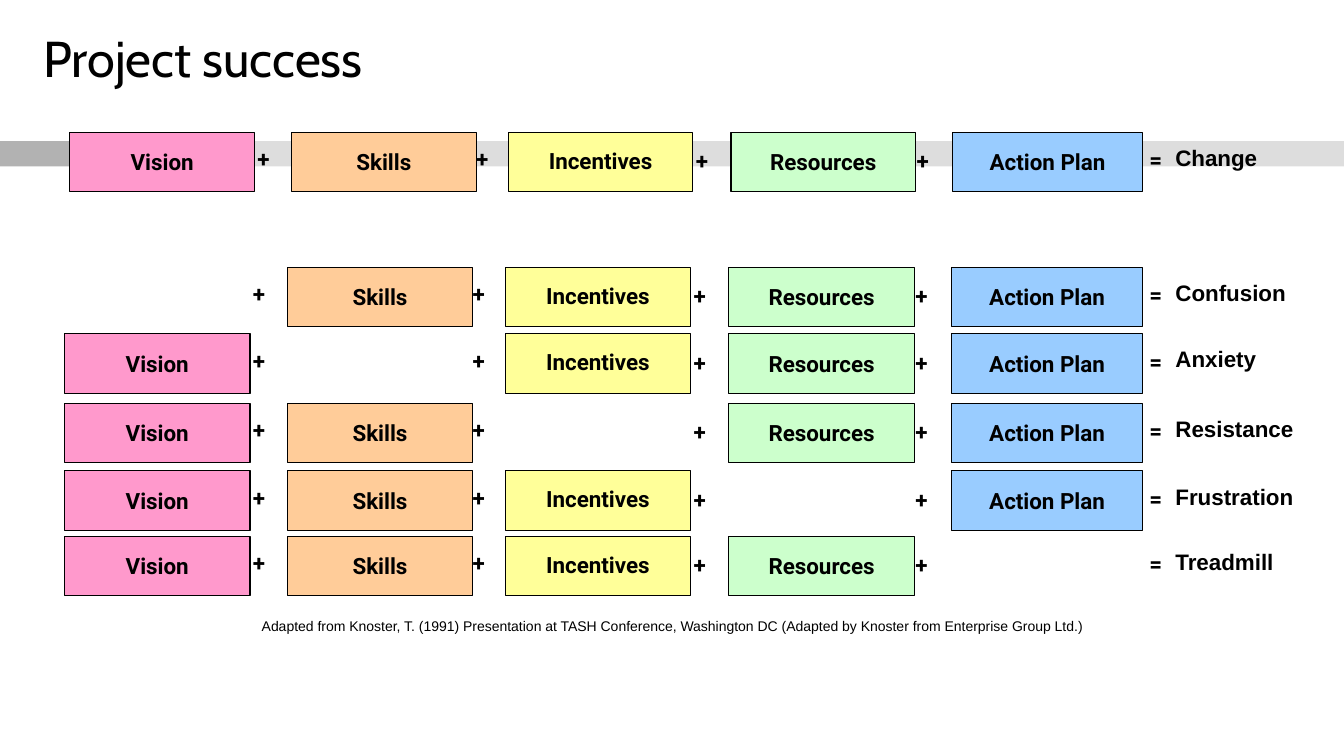
from pptx import Presentation
from pptx.dml.color import RGBColor
from pptx.enum.shapes import MSO_SHAPE as Shape
from pptx.enum.text import MSO_ANCHOR as Anchor, MSO_AUTO_SIZE as AutoSize, PP_ALIGN as Align
from pptx.util import Inches, Pt

COLORS = {
    "black": "000000", "dark band": "B2B2B2", "light band": "DDDDDD",
    "Vision": "FF99CC", "Skills": "FFCC99", "Incentives": "FFFF99",
    "Resources": "CCFFCC", "Action Plan": "99CCFF",
}
# Name, left and width of each factor
FACTORS = [
    ("Vision", 0.64, 1.84), ("Skills", 2.85, 1.84), ("Incentives", 5.01, 1.84),
    ("Resources", 7.23, 1.84), ("Action Plan", 9.44, 1.89),
]
# Left and drop below the row top of each operator
OPERATORS = [
    ("+", 2.41, 0.08), ("+", 4.59, 0.08), ("+", 6.78, 0.1), ("+", 8.98, 0.1),
    ("=", 11.3, 0.09),
]
# Row top, missing factor, outcome, reduction of the horizontal scale in percent
ROWS = [
    (1.31, None, "Change", 0.5),
    (2.65, "Vision", "Confusion", 0),
    (3.31, "Skills", "Anxiety", 0),
    (4, "Incentives", "Resistance", 0),
    (4.67, "Resources", "Frustration", 0),
    (5.32, "Action Plan", "Treadmill", 0),
]
FACTORS_RIGHT = 11.33


class SuccessSlide:
    def __init__(self, slide):
        self.slide = slide

    def color(self, name):
        return RGBColor.from_string(COLORS[name])

    def set_text(self, frame, text, size=16, font="Roboto", bold=True, align=Align.LEFT):
        frame.text = text
        para = frame.paragraphs[0]
        para.alignment = align
        for span in para.runs:
            span.font.name = font
            span.font.size = Pt(size)
            span.font.bold = bold
            span.font.color.rgb = self.color("black")

    def title(self, text, left, top, width, height):
        title = self.slide.shapes.title
        title.left, title.top = Inches(left), Inches(top)
        title.width, title.height = Inches(width), Inches(height)
        title.text_frame.vertical_anchor = Anchor.MIDDLE
        self.set_text(title.text_frame, text, 36, "Cabin", False)

    def rectangle(self, fill, left, top, width, height):
        box = self.slide.shapes.add_shape(
            Shape.RECTANGLE, Inches(left), Inches(top), Inches(width), Inches(height))
        box.shadow.inherit = False
        box.fill.solid()
        box.fill.fore_color.rgb = self.color(fill)
        box.line.fill.background()
        return box

    def factor(self, name, left, top, width):
        box = self.rectangle(name, left, top, width, 0.59)
        box.line.color.rgb = self.color("black")
        box.line.width = Pt(0.75)
        frame = box.text_frame
        frame.vertical_anchor = Anchor.MIDDLE
        if name == "Incentives":
            frame.margin_left = frame.margin_right = Inches(0.02)
            frame.margin_top, frame.margin_bottom = Inches(0.01), Inches(0.04)
        self.set_text(frame, name, align=Align.CENTER)

    def label(self, text, left, top, width, height=0.37, **style):
        box = self.slide.shapes.add_textbox(
            Inches(left), Inches(top), Inches(width), Inches(height))
        box.text_frame.word_wrap = True
        box.text_frame.auto_size = AutoSize.SHAPE_TO_FIT_TEXT
        self.set_text(box.text_frame, text, **style)

    def equation(self, top, missing, outcome, reduction):
        """Draw one row, reduced horizontally towards the right edge of the factors."""
        scale = 1 - reduction / 100

        def place(left):
            return FACTORS_RIGHT - (FACTORS_RIGHT - left) * scale

        for name, left, width in FACTORS:
            if name != missing:
                self.factor(name, place(left), top, width * scale)
        for sign, left, drop in OPERATORS:
            self.label(sign, place(left), top + drop, 0.52)
        self.label(outcome, place(11.56), top + 0.07, 1.7, font="Arial")


def main():
    deck = Presentation()
    deck.slide_width, deck.slide_height = Inches(13.33), Inches(7.5)
    page = SuccessSlide(deck.slides.add_slide(deck.slide_layouts[5]))
    page.rectangle("dark band", 0, 1.4, 0.78, 0.25)
    page.rectangle("light band", 0.86, 1.4, 12.47, 0.25)
    page.title("Project success", 0.33, 0.21, 11.33, 0.71)
    for row in ROWS:
        page.equation(*row)
    page.label(
        "Adapted from Knoster, T. (1991) Presentation at TASH Conference, "
        "Washington DC (Adapted by Knoster from Enterprise Group Ltd.)",
        0, 6.08, 13.33, 0.27, size=10, font="Arial", bold=False, align=Align.CENTER)
    deck.save("out.pptx")


if __name__ == "__main__":
    main()
